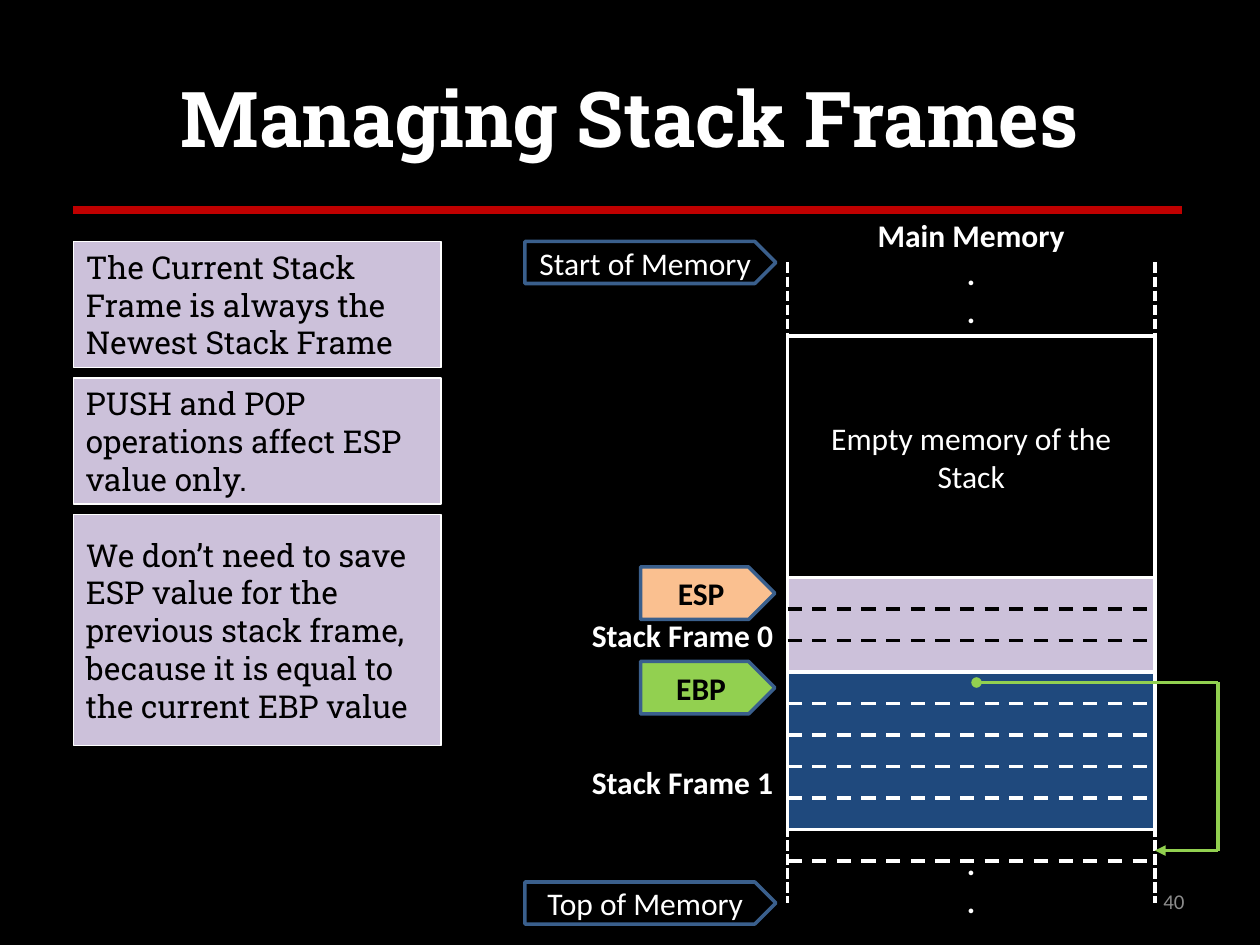
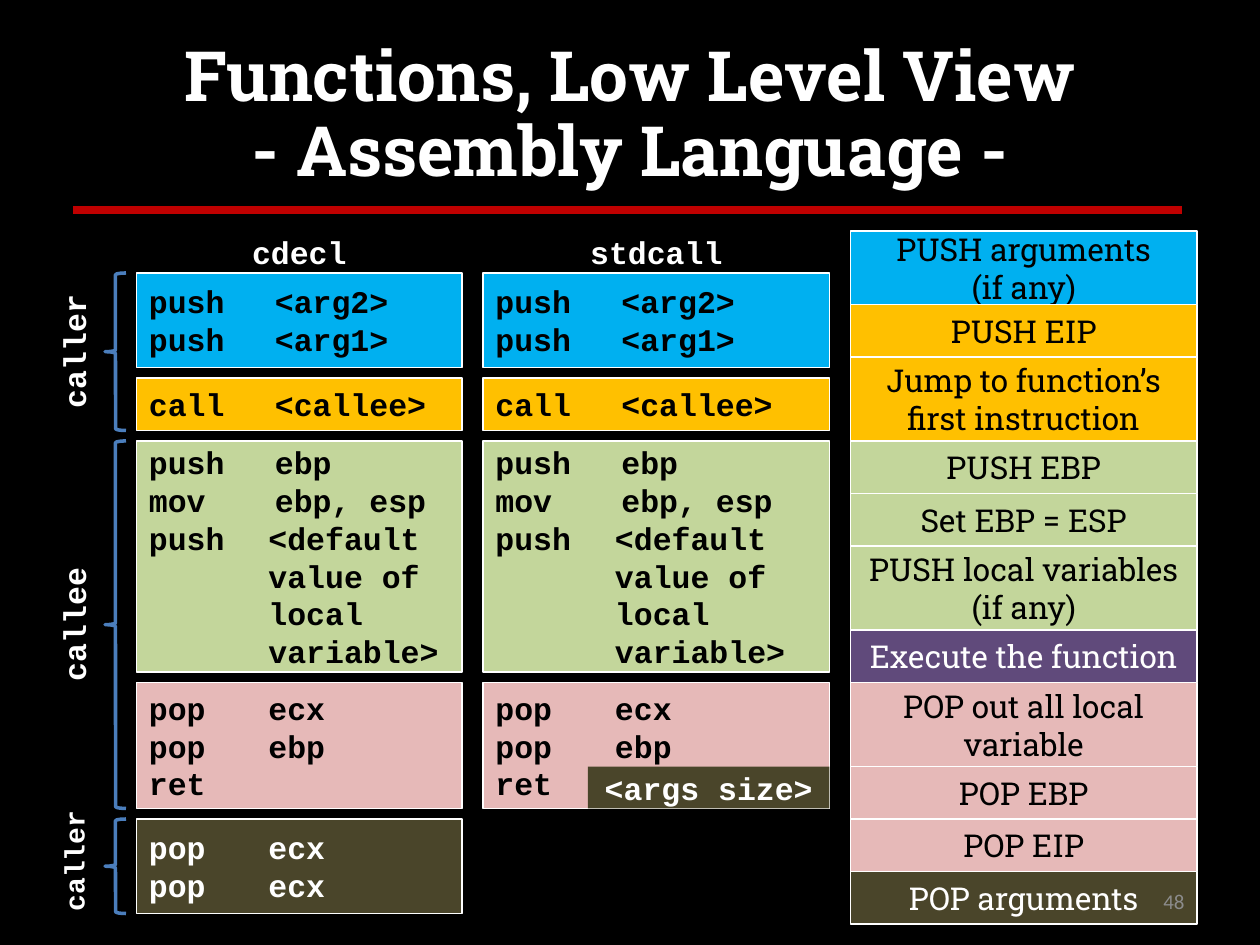
from lxml import etree
from pptx import Presentation
from pptx import util as u
from pptx.dml.color import RGBColor
from pptx.enum import dml, shapes, text
from pptx.oxml import ns

GRID = 2.54 / 12
HANG = 2.41
TAB = 2.54
SLAB, SANS, MONO = "Roboto Slab", "Calibri", "Courier New"
COLORS = {
    "black": "000000", "white": "FFFFFF", "red": "C00000", "lilac": "CCC1DA",
    "navy": "1F497D", "orange": "FAC090", "green": "92D050", "edge": "3A5F8C",
    "sky": "00B0F0", "amber": "FFC000", "sage": "C3D69B", "purple": "604A7B",
    "pink": "E6B9B8", "olive": "4A452A", "brace": "4B7EBC", "grey": "8C8C8C",
}
RECT = shapes.MSO_SHAPE.RECTANGLE
PLATE = shapes.MSO_SHAPE.PENTAGON
BRACE = shapes.MSO_SHAPE.LEFT_BRACE
DASH = dml.MSO_LINE.DASH
SIDE_DASH = dml.MSO_LINE.SQUARE_DOT
LEFT, CENTER, RIGHT = text.PP_ALIGN.LEFT, text.PP_ALIGN.CENTER, text.PP_ALIGN.RIGHT


def rgb(name):
    return RGBColor.from_string(COLORS[name])


def grid(*values):
    return [u.Cm(v * GRID) for v in values]


class Deck:
    def __init__(self):
        self.prs = Presentation()
        self.prs.slide_width, self.prs.slide_height = u.Cm(25.4), u.Cm(19.05)
        master = self.prs.slide_master
        fill = master.background.fill
        fill.solid()
        fill.fore_color.rgb = rgb("black")
        for root in (self.prs.element, master.element):
            for el in root.iter():
                if el.get("defTabSz"):
                    el.set("defTabSz", str(u.Cm(TAB)))

    def slide(self, lines, size, spacing=None):
        self.s = self.prs.slides.add_slide(self.prs.slide_layouts[5])
        self.target = self.s.shapes
        sp = self.s.shapes.title
        sp.left, sp.top, sp.width, sp.height = grid(6, 3.6, 108, 15)
        tf = sp.text_frame
        tf.auto_size = text.MSO_AUTO_SIZE.NONE
        tf.vertical_anchor = text.MSO_ANCHOR.MIDDLE
        p = tf.paragraphs[0]
        p.alignment, p.line_spacing = CENTER, spacing
        for i, line in enumerate(lines):
            if i:
                p.add_line_break()
            self.add_words(p, line, SLAB, size, "white", True)
        self.line((7, 20), (112.6, 20), "red", 5)

    def group(self):
        self.target = self.s.shapes.add_group_shape().shapes

    def ungroup(self):
        self.target = self.s.shapes

    def add_words(self, p, words, font, size, color, bold):
        r = p.add_run()
        r.text = words
        r.font.name, r.font.size, r.font.bold = font, u.Pt(size), bold
        r.font.color.rgb = rgb(color)

    def add_lines(self, sp, lines, font=SANS, color="white", size=18, bold=False, align=CENTER):
        tf = sp.text_frame
        tf.word_wrap = True
        tf.vertical_anchor = text.MSO_ANCHOR.MIDDLE
        for i, line in enumerate(lines):
            p = tf.add_paragraph() if i else tf.paragraphs[0]
            p.alignment = align
            self.add_words(p, line, font, size, color, bold)
        return sp

    def box(self, at, fill=None, line="white", width=1, kind=RECT, lines=(), **style):
        sp = self.target.add_shape(kind, *grid(*at))
        sp.shadow.inherit = False
        if fill:
            sp.fill.solid()
            sp.fill.fore_color.rgb = rgb(fill)
        else:
            sp.fill.background()
        if line:
            sp.line.color.rgb = rgb(line)
            sp.line.width = u.Pt(width)
        else:
            sp.line.fill.background()
        return self.add_lines(sp, lines, **style)

    def label(self, at, lines, **style):
        return self.add_lines(self.target.add_textbox(*grid(*at)), lines, **style)

    def side_label(self, middle, length, words, size):
        sp = self.label((7 - length / 2, middle - 2, length, 4), [words],
                        font=MONO, size=size, bold=True)
        sp.rotation = 270

    def code(self, at, fill, color, lines, hang_from):
        sp = self.box(at, fill, lines=lines, font=MONO, color=color, bold=True, align=LEFT)
        for i, p in enumerate(sp.text_frame.paragraphs):
            pPr = p._p.get_or_add_pPr()
            if i >= hang_from:
                pPr.set("marL", str(u.Cm(HANG)))
                pPr.set("indent", str(-u.Cm(HANG)))
            else:
                tabs = etree.SubElement(pPr, ns.qn("a:tabLst"))
                etree.SubElement(tabs, ns.qn("a:tab"), pos=str(u.Cm(TAB)), algn="l")

    def line(self, start, end, color, width=2, dash=None, head=None, tail=None):
        cx = self.target.add_connector(shapes.MSO_CONNECTOR.STRAIGHT, *grid(*start, *end))
        cx.line.color.rgb = rgb(color)
        cx.line.width = u.Pt(width)
        if dash:
            cx.line.dash_style = dash
        spPr = cx.element.spPr
        ln = spPr.find(ns.qn("a:ln"))
        for tag, end_type in (("a:headEnd", head), ("a:tailEnd", tail)):
            if end_type:
                etree.SubElement(ln, ns.qn(tag), type=end_type)
        etree.SubElement(spPr, ns.qn("a:effectLst"))

    def number(self, words):
        self.label((86, 83.4, 28, 4.8), [words], size=12, color="grey", align=RIGHT)


def stack_frames(d):
    x, w = 75, 35
    right = x + w
    d.slide(["Managing Stack Frames"], 44)
    d.box((x, 32, w, 23), width=2, lines=["Empty memory of the Stack"])
    d.label((x, 21, w, 10), ["Main Memory", ".", "."], bold=True)
    for side in (x, right):
        d.line((side, 25), (side, 86), "white", dash=SIDE_DASH)
    d.label((x, 81, w, 6), [".", "."], bold=True)
    d.box((x, 64, w, 15), "navy", width=2)
    d.box((x, 55, w, 9), "lilac", width=2)
    for color, rows in (("white", (67, 70, 73, 76, 82)), ("black", (58, 61))):
        for y in rows:
            d.line((x, y), (right, y), color, dash=DASH)

    for y, fill, words in ((54, "orange", "ESP"), (63, "green", "EBP")):
        d.box((61, y, 12.8, 5), fill, "edge", 2, PLATE, [words], color="black", bold=True)
    for y, words in ((23, "Start of Memory"), (84, "Top of Memory")):
        d.box((50, y, 23.9, 4), None, "edge", 2, PLATE, [words])
    for y, words in ((59, "Stack Frame 0"), (73, "Stack Frame 1")):
        d.label((55, y, 20, 3), [words], bold=True)

    d.line((93, 65), (116, 65), "green", head="oval")
    d.line((116, 65), (116, 81), "green")
    d.line((116, 81), (right, 81), "green", tail="triangle")

    y = 23
    for h, words in (
        (12, "The Current Stack Frame is always the Newest Stack Frame"),
        (12, "PUSH and POP operations affect ESP value only."),
        (22, "We don’t need to save ESP value for the previous stack frame, "
             "because it is equal to the current EBP value"),
    ):
        d.box((7, y, 35, h), "lilac", lines=[words], font=SLAB, color="black", align=LEFT)
        y += h + 1
    d.number("40")


def assembly_view(d):
    d.slide(["Functions, Low Level View", "- Assembly Language -"], 39.6, 0.9)
    steps = (
        (7, "sky", "black", ["PUSH arguments", "(if any)"]),
        (5, "amber", "black", ["PUSH EIP"]),
        (8, "amber", "black", ["Jump to function’s first instruction"]),
        (5, "sage", "black", ["PUSH EBP"]),
        (5, "sage", "black", ["Set EBP = ESP"]),
        (8, "sage", "black", ["PUSH local variables", "(if any)"]),
        (5, "purple", "white", ["Execute the function"]),
        (8, "pink", "black", ["POP out all local variable"]),
        (5, "pink", "black", ["POP EBP"]),
        (5, "pink", "black", ["POP EIP"]),
        (5, "olive", "white", ["POP arguments"]),
    )
    y = 22
    for h, fill, color, lines in steps:
        d.box((81, y, 33, h), fill, lines=lines, font=SLAB, color=color)
        y += h

    blocks = (
        (9, "sky", "black", ["push\t<arg2>", "push\t<arg1>"], 2),
        (5, "amber", "black", ["call\t<callee>"], 1),
        (22, "sage", "black", ["push\tebp", "mov\tebp, esp",
                               "push\t<default value of local variable>"], 2),
        (12, "pink", "black", ["pop\tecx", "pop\tebp", "ret"], 0),
        (9, "olive", "white", ["pop\tecx", "pop\tecx"], 0),
    )
    for name, x, w, shown in (("cdecl", 13, 31, blocks), ("stdcall", 46, 33, blocks[:4])):
        d.group()
        y = 26
        for h, fill, color, lines, hang_from in shown:
            d.code((x, y, w, h), fill, color, lines, hang_from)
            y += h + 1
        d.label((x, 22, w, 4), [name], font=MONO, bold=True)
    d.box((56, 73, 23, 4), "olive", None, lines=["<args size>"], font=MONO, bold=True)
    d.ungroup()

    for y, h, middle, length, words, size in (
        (26, 15, 33.5, 15, "caller", 18),
        (42, 35, 59.5, 35, "callee", 18),
        (78, 9, 82, 16, "caller", 16),
    ):
        d.box((10, y, 2, h), None, "brace", 2, BRACE)
        d.side_label(middle, length, words, size)
    d.number("48")


def main():
    d = Deck()
    stack_frames(d)
    assembly_view(d)
    d.prs.save("out.pptx")


if __name__ == "__main__":
    main()
